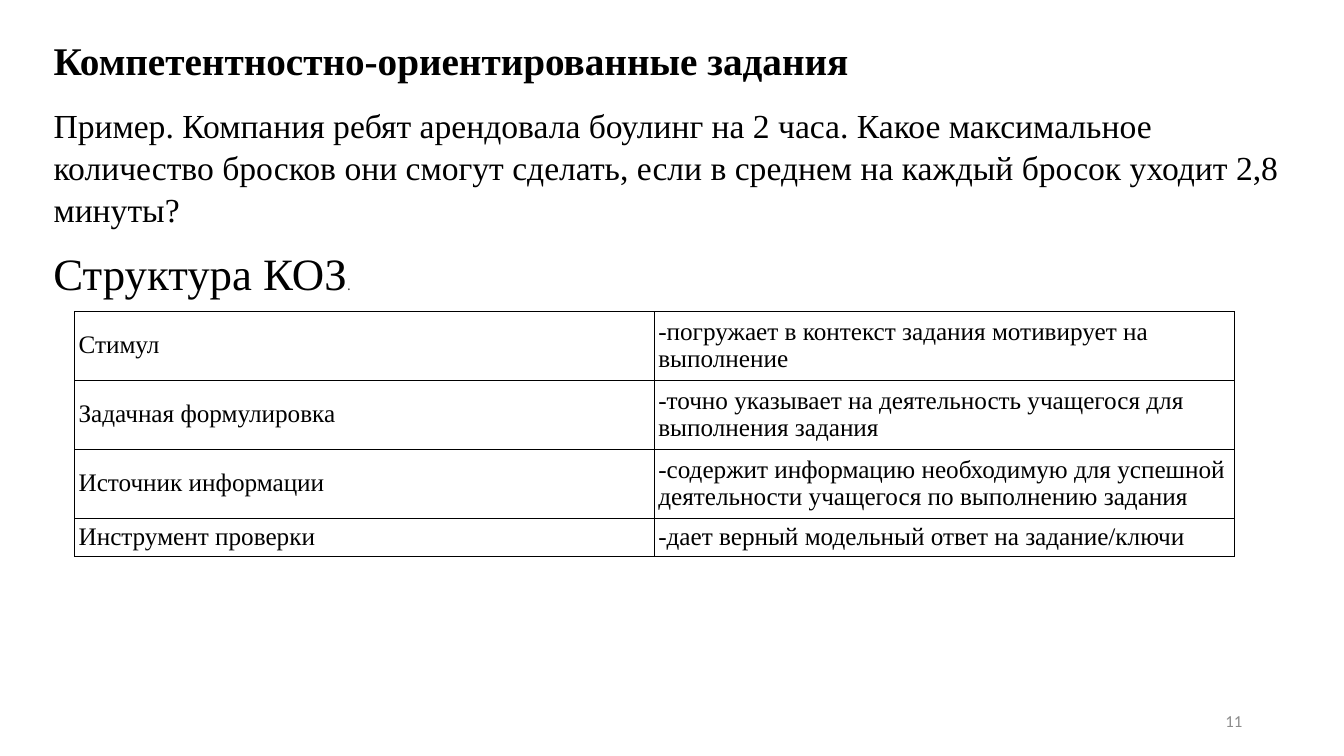
from dataclasses import dataclass
from typing import Any

from lxml import etree
from pptx import Presentation
from pptx import util as u
from pptx.dml import color
from pptx.enum import text
from pptx.oxml import ns

SLIDE_WIDTH = u.Inches(13.33)
SLIDE_HEIGHT = u.Inches(7.5)


@dataclass(frozen=True)
class Style:
    size: float
    font: str = "Times New Roman"
    ink: str = "000000"
    bold: bool = False
    spacing: float = 1.0


@dataclass(frozen=True)
class Theme:
    title: Style = Style(28, bold=True)
    body: Style = Style(24, spacing=1.05)
    heading: Style = Style(32)
    full_stop: Style = Style(10, "Open Sans", "333333")
    cell: Style = Style(18, spacing=0.95)
    number: Style = Style(12, "Calibri", "8C8C8C")
    paper: str = "FFFFFF"
    border: str = "000000"
    border_width: float = 0.6


@dataclass(frozen=True)
class Area:
    """Percentages of the slide's width and height."""
    left: float
    top: float
    width: float
    height: float

    def lengths(self) -> tuple[int, int, int, int]:
        return (int(SLIDE_WIDTH * self.left / 100), int(SLIDE_HEIGHT * self.top / 100),
                int(SLIDE_WIDTH * self.width / 100), int(SLIDE_HEIGHT * self.height / 100))


@dataclass(frozen=True)
class TaskPart:
    name: str
    purpose: str
    height: float


THEME = Theme()
TITLE_AREA = Area(3.23, 4.13, 62.19, 7.6)
BODY_AREA = Area(3.23, 12.93, 94.97, 22.93)
HEADING_AREA = Area(3.23, 31.73, 23.86, 8.53)
TABLE_AREA = Area(5.55, 41.2, 86.27, 32.4)
NUMBER_AREA = Area(70.67, 92.67, 22.51, 5.33)

TASK_PARTS = [
    TaskPart("Стимул", "-погружает в контекст задания мотивирует на выполнение", 9.13),
    TaskPart("Задачная формулировка",
             "-точно указывает на деятельность учащегося для выполнения задания", 9.13),
    TaskPart("Источник информации",
             "-содержит информацию необходимую для успешной деятельности учащегося "
             "по выполнению задания", 9.13),
    TaskPart("Инструмент проверки", "-дает верный модельный ответ на задание/ключи", 5.01),
]


def format_span(span: Any, style: Style) -> None:
    span.font.size = u.Pt(style.size)
    span.font.name = style.font
    span.font.bold = style.bold
    span.font.color.rgb = color.RGBColor.from_string(style.ink)


def write(frame: Any, words: str, style: Style,
          align: text.PP_ALIGN = text.PP_ALIGN.LEFT) -> None:
    frame.text = words
    para = frame.paragraphs[0]
    para.alignment = align
    para.line_spacing = style.spacing
    para.space_before = u.Pt(0)
    format_span(para.runs[0], style)


def place(box: Any, area: Area, anchor: text.MSO_ANCHOR, wrap: bool = True) -> Any:
    box.left, box.top, box.width, box.height = area.lengths()
    frame = box.text_frame
    frame.word_wrap = wrap
    frame.auto_size = text.MSO_AUTO_SIZE.NONE
    frame.vertical_anchor = anchor
    return frame


def remove_bullet(para: Any) -> None:
    properties = para._p.get_or_add_pPr()
    properties.set("marL", "0")
    properties.set("indent", "0")
    etree.SubElement(properties, ns.qn("a:buNone"))


def add_borders(cell: Any) -> None:
    properties = cell._tc.get_or_add_tcPr()
    for position, side in enumerate(("a:lnL", "a:lnR", "a:lnT", "a:lnB")):
        line = etree.Element(ns.qn(side), w=str(u.Pt(THEME.border_width)))
        fill = etree.SubElement(line, ns.qn("a:solidFill"))
        etree.SubElement(fill, ns.qn("a:srgbClr"), val=THEME.border)
        properties.insert(position, line)


def fill_cell(cell: Any, words: str) -> None:
    write(cell.text_frame, words, THEME.cell)
    cell.vertical_anchor = text.MSO_ANCHOR.MIDDLE
    cell.margin_left = cell.margin_right = u.Inches(0.04)
    cell.margin_top = cell.margin_bottom = u.Inches(0.04)
    cell.fill.solid()
    cell.fill.fore_color.rgb = color.RGBColor.from_string(THEME.paper)
    add_borders(cell)


def add_structure_table(page: Any) -> None:
    table = page.shapes.add_table(len(TASK_PARTS), 2, *TABLE_AREA.lengths()).table
    table.first_row = False
    table.horz_banding = False
    for row, part in enumerate(TASK_PARTS):
        table.rows[row].height = int(SLIDE_HEIGHT * part.height / 100)
        fill_cell(table.cell(row, 0), part.name)
        fill_cell(table.cell(row, 1), part.purpose)


def main() -> None:
    deck = Presentation()
    deck.slide_width, deck.slide_height = SLIDE_WIDTH, SLIDE_HEIGHT
    page = deck.slides.add_slide(deck.slide_layouts[1])

    title = place(page.shapes.title, TITLE_AREA, text.MSO_ANCHOR.TOP)
    write(title, "Компетентностно-ориентированные задания", THEME.title)

    body = place(page.placeholders[1], BODY_AREA, text.MSO_ANCHOR.TOP)
    write(body, "Пример. Компания ребят арендовала боулинг на 2 часа. Какое максимальное "
                "количество бросков они смогут сделать, если в среднем на каждый бросок "
                "уходит 2,8 минуты?", THEME.body)
    remove_bullet(body.paragraphs[0])

    add_structure_table(page)

    heading_box = page.shapes.add_textbox(*HEADING_AREA.lengths())
    heading = place(heading_box, HEADING_AREA, text.MSO_ANCHOR.MIDDLE, wrap=False)
    write(heading, "Структура КОЗ", THEME.heading)
    full_stop = heading.paragraphs[0].add_run()
    full_stop.text = "."
    format_span(full_stop, THEME.full_stop)

    number_box = page.shapes.add_textbox(*NUMBER_AREA.lengths())
    number = place(number_box, NUMBER_AREA, text.MSO_ANCHOR.MIDDLE)
    write(number, "11", THEME.number, text.PP_ALIGN.RIGHT)

    deck.save("out.pptx")


if __name__ == "__main__":
    main()
